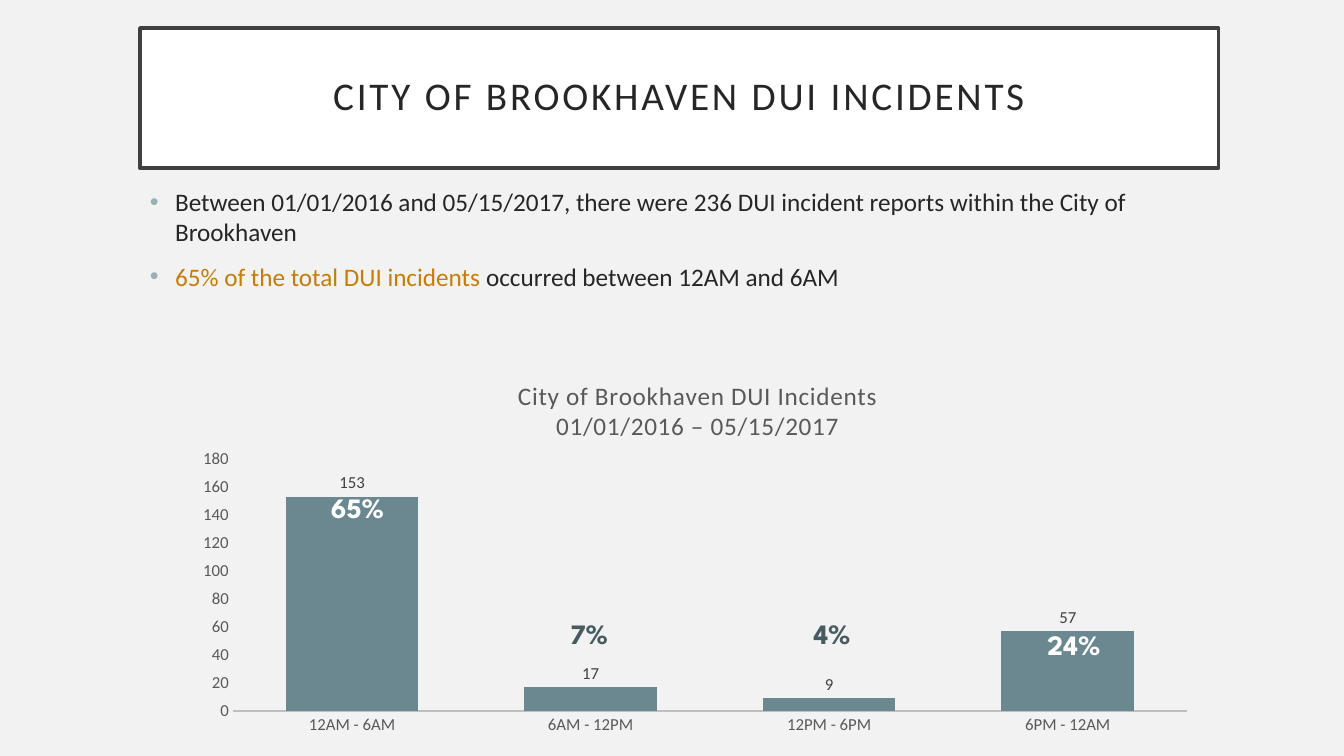
from lxml import etree
from pptx import Presentation
from pptx.chart.data import CategoryChartData
from pptx.dml.color import RGBColor
from pptx.enum.chart import XL_CHART_TYPE, XL_LABEL_POSITION, XL_TICK_MARK
from pptx.enum.shapes import MSO_SHAPE
from pptx.enum.text import MSO_ANCHOR, PP_ALIGN
from pptx.oxml import parse_xml
from pptx.oxml.ns import nsdecls, qn
from pptx.util import Pt

COLUMN_CLUSTERED = XL_CHART_TYPE.COLUMN_CLUSTERED
OUTSIDE_END = XL_LABEL_POSITION.OUTSIDE_END
NO_TICK = XL_TICK_MARK.NONE
RECTANGLE = MSO_SHAPE.RECTANGLE
MIDDLE = MSO_ANCHOR.MIDDLE
CENTER = PP_ALIGN.CENTER

WHITE = RGBColor(0xFF, 0xFF, 0xFF)
BACKGROUND = RGBColor(0xF2, 0xF2, 0xF2)
INK = RGBColor(0x26, 0x26, 0x26)
FRAME = RGBColor(0x40, 0x40, 0x40)
AXIS_TEXT = RGBColor(0x59, 0x59, 0x59)
AXIS_LINE = RGBColor(0xBF, 0xBF, 0xBF)
ORANGE = RGBColor(0xC6, 0x7D, 0x08)
TEAL = RGBColor(0x6B, 0x88, 0x91)
DARK_TEAL = RGBColor(0x47, 0x5B, 0x61)
BULLET = RGBColor(0x9B, 0xAF, 0xB5)

BODY_FONT = "Calibri"
PERCENT_FONT = "League Spartan"

BULLETS = [
    [("Between 01/01/2016 and 05/15/2017, there were 236 DUI incident reports "
      "within the City of Brookhaven", INK)],
    [("65% of the total DUI incidents ", ORANGE),
     ("occurred between 12AM and 6AM", INK)],
]
INCIDENTS = {"12AM - 6AM": 153, "6AM - 12PM": 17, "12PM - 6PM": 9, "6PM - 12AM": 57}
CHART_TITLE = ["City of Brookhaven DUI Incidents", "01/01/2016 – 05/15/2017"]
PERCENTAGES = [
    ("65%", 201, 343.4, WHITE),
    ("7%", 366.5, 433.4, DARK_TEAL),
    ("4%", 540, 433.4, DARK_TEAL),
    ("24%", 712.8, 441.4, WHITE),
]


def style_font(font, size, color, name=BODY_FONT, bold=False):
    """Set size, colour, typeface and weight of a font."""
    font.size = Pt(size)
    font.color.rgb = color
    font.name = name
    font.bold = bold


def set_letter_spacing(run, points):
    """Spread the letters of a run by a number of points."""
    run.font._element.set("spc", str(int(points * 100)))


def add_bullet(paragraph):
    """Give a paragraph a coloured bullet with a hanging indent."""
    properties = paragraph._p.get_or_add_pPr()
    properties.set("marL", str(Pt(18)))
    properties.set("indent", str(-Pt(18)))
    color = etree.SubElement(properties, qn("a:buClr"))
    etree.SubElement(color, qn("a:srgbClr"), val=str(BULLET))
    etree.SubElement(properties, qn("a:buFont"), typeface="Arial")
    etree.SubElement(properties, qn("a:buChar"), char="•")


def add_title(slide, text):
    """Add the framed slide title."""
    shape = slide.shapes.add_shape(RECTANGLE, Pt(100), Pt(20), Pt(770.4), Pt(100))
    shape.shadow.inherit = False
    shape.fill.solid()
    shape.fill.fore_color.rgb = WHITE
    shape.line.color.rgb = FRAME
    shape.line.width = Pt(2.5)
    frame = shape.text_frame
    frame.text = text
    frame.word_wrap = True
    frame.vertical_anchor = MIDDLE
    paragraph = frame.paragraphs[0]
    paragraph.alignment = CENTER
    paragraph.line_spacing = 0.9
    style_font(paragraph.runs[0].font, 28, INK)
    set_letter_spacing(paragraph.runs[0], 2)


def add_bullets(slide, items):
    """Add the bulleted text below the title."""
    box = slide.shapes.add_textbox(Pt(100), Pt(129.6), Pt(770.4), Pt(345))
    frame = box.text_frame
    frame.word_wrap = True
    for index, parts in enumerate(items):
        paragraph = frame.add_paragraph() if index else frame.paragraphs[0]
        paragraph.space_before = Pt(10)
        add_bullet(paragraph)
        for text, color in parts:
            run = paragraph.add_run()
            run.text = text
            style_font(run.font, 18, color)


def make_layout(target, **fractions):
    """Build a chart layout from fractions of the chart's size."""
    inner = '<c:layoutTarget val="inner"/>' if target == "plot" else ""
    modes = "".join(f'<c:{key}Mode val="edge"/>' for key in "xy")
    places = "".join(f'<c:{key} val="{value}"/>' for key, value in fractions.items())
    return parse_xml(f'<c:layout {nsdecls("c")}><c:manualLayout>{inner}{modes}{places}'
                     "</c:manualLayout></c:layout>")


def set_layout(element, layout, position):
    """Replace the layout of a chart element."""
    for old in element.findall(qn("c:layout")):
        element.remove(old)
    element.insert(position, layout)


def add_chart_title(chart, lines):
    """Write the chart title, one paragraph a line."""
    frame = chart.chart_title.text_frame
    frame.text = "\n".join(lines)
    for paragraph in frame.paragraphs:
        style_font(paragraph.runs[0].font, 18, AXIS_TEXT)
        set_letter_spacing(paragraph.runs[0], 0.5)
    set_layout(chart.chart_title._element, make_layout("title", x=0.325, y=0.05), 1)


def style_axes(chart):
    """Format the category and value axes."""
    for axis in (chart.category_axis, chart.value_axis):
        axis.major_tick_mark = axis.minor_tick_mark = NO_TICK
        style_font(axis.tick_labels.font, 12, AXIS_TEXT)
    chart.category_axis.format.line.color.rgb = AXIS_LINE
    chart.category_axis.format.line.width = Pt(1.25)
    value_axis = chart.value_axis
    value_axis.minimum_scale = 0
    value_axis.maximum_scale = 180
    value_axis.major_unit = 20
    value_axis.format.line.fill.background()
    grid_line = value_axis.major_gridlines.format.line
    grid_line.color.rgb = BACKGROUND
    grid_line.width = Pt(0.75)


def add_incident_chart(slide, incidents):
    """Add the column chart of incidents by time of day."""
    data = CategoryChartData()
    data.categories = list(incidents)
    data.add_series("Series 1", list(incidents.values()))
    chart = slide.shapes.add_chart(
        COLUMN_CLUSTERED, Pt(129.6), Pt(255), Pt(733), Pt(275), data).chart
    chart.has_legend = False
    chart.font.size = Pt(10)
    chart.font.name = BODY_FONT
    add_chart_title(chart, CHART_TITLE)
    style_axes(chart)
    plot = chart.plots[0]
    plot.gap_width = 80
    plot.overlap = 25
    plot.vary_by_categories = False
    series = plot.series[0]
    series.format.fill.solid()
    series.format.fill.fore_color.rgb = TEAL
    labels = series.data_labels
    labels.show_value = True
    labels.position = OUTSIDE_END
    style_font(labels.font, 12, FRAME)
    plot_area = chart._chartSpace.chart.plotArea
    set_layout(plot_area, make_layout("plot", x=0.05, y=0.265, w=0.93, h=0.655), 0)


def add_percentage(slide, text, left, top, color):
    """Add a bold percentage beside its column."""
    box = slide.shapes.add_textbox(Pt(left), Pt(top), Pt(108.7), Pt(49))
    frame = box.text_frame
    frame.text = text
    frame.word_wrap = True
    paragraph = frame.paragraphs[0]
    paragraph.alignment = CENTER
    paragraph.line_spacing = 1.15
    style_font(paragraph.runs[0].font, 20, color, PERCENT_FONT, True)


def main():
    """Build the slide and save it."""
    presentation = Presentation()
    presentation.slide_width = Pt(960)
    presentation.slide_height = Pt(540)
    slide = presentation.slides.add_slide(presentation.slide_layouts[6])
    slide.background.fill.solid()
    slide.background.fill.fore_color.rgb = BACKGROUND
    add_bullets(slide, BULLETS)
    add_title(slide, "CITY OF BROOKHAVEN DUI INCIDENTS")
    add_incident_chart(slide, INCIDENTS)
    for percentage in PERCENTAGES:
        add_percentage(slide, *percentage)
    presentation.save("out.pptx")


if __name__ == "__main__":
    main()
